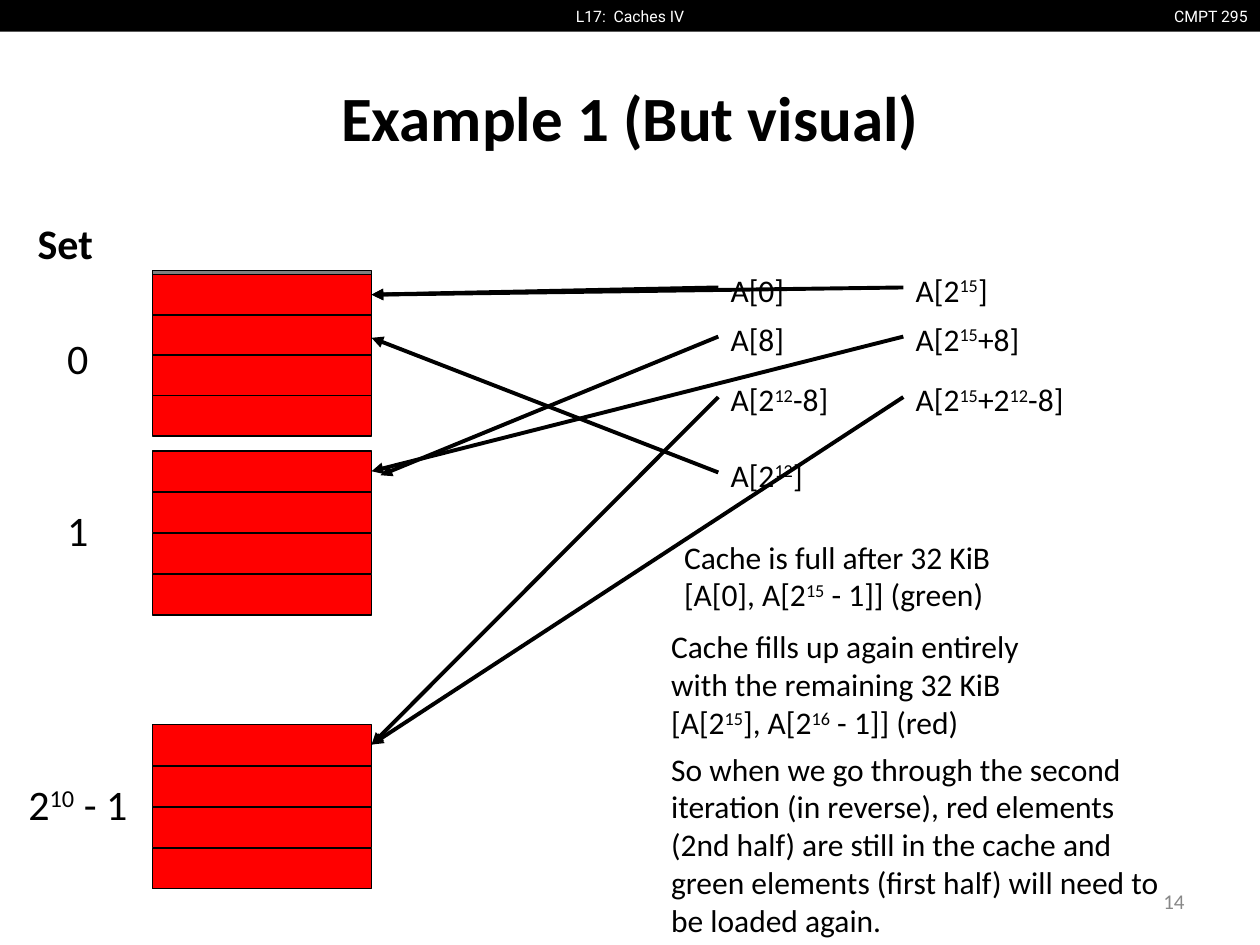
from dataclasses import dataclass

from lxml import etree
from pptx import Presentation
from pptx.dml.color import RGBColor
from pptx.enum import shapes, text
from pptx.oxml.ns import qn
from pptx.util import Cm, Pt


@dataclass(frozen=True)
class Theme:
    black: RGBColor = RGBColor(0, 0, 0)
    white: RGBColor = RGBColor(255, 255, 255)
    red: RGBColor = RGBColor(255, 0, 0)
    gray: RGBColor = RGBColor(128, 128, 128)
    number: RGBColor = RGBColor(0x88, 0x88, 0x88)
    body_font: str = "Calibri"
    header_font: str = "Roboto"
    title_size: int = 36
    set_size: int = 24
    body_size: int = 18
    number_size: int = 12
    header_size: int = 9


THEME = Theme()
LEFT, CENTER, RIGHT = text.PP_ALIGN.LEFT, text.PP_ALIGN.CENTER, text.PP_ALIGN.RIGHT
BLOCK_LEFT, BLOCK_WIDTH, BLOCK_HEIGHT = 3.07, 4.42, 0.82
BLOCK_RIGHT = BLOCK_LEFT + BLOCK_WIDTH
LABEL_HEIGHT = 1.17

# label, top of the label, top of the first block, distance between blocks
SETS = [
    ("0", 6.45, 5.54, 0.81),
    ("1", 9.93, 9.09, 0.83),
    ("2^10^ - 1", 15.44, 14.61, 0.83),
]
# label, left, top, width, arrow target
ELEMENTS = [
    ("A[0]", 14.48, 5.21, 1.63, (BLOCK_RIGHT, 5.94)),
    ("A[8]", 14.48, 6.2, 1.63, (7.67, 9.58)),
    ("A[2^12^-8]", 14.48, 7.42, 2.54, (BLOCK_RIGHT, 15.01)),
    ("A[2^12^]", 14.48, 8.94, 2.36, (BLOCK_RIGHT, 6.81)),
    ("A[2^15^]", 18.21, 5.21, 2.08, (BLOCK_RIGHT, 5.94)),
    ("A[2^15^+8]", 18.21, 6.2, 2.82, (BLOCK_RIGHT, 9.5)),
    ("A[2^15^+2^12^-8]", 18.21, 7.42, 3.63, (BLOCK_RIGHT, 15.01)),
]
# text, left, top, width, height
NOTES = [
    ("Cache is full after 32 KiB\n[A[0], A[2^15^ - 1]] (green)", 13.54, 10.59, 10.59, 1.35),
    ("Cache fills up again entirely with the remaining 32 KiB "
     "[A[2^15^], A[2^16^ - 1]] (red)", 13.28, 12.4, 7.77, 2.72),
    ("So when we go through the second iteration (in reverse), red elements "
     "(2nd half) are still in the cache and green elements (first half) "
     "will need to be loaded again.", 13.28, 14.86, 10.59, 2.92),
]


def style_runs(para, size, color, font, bold=False):
    for span in para.runs:
        span.font.size = Pt(size)
        span.font.name = font
        span.font.bold = bold
        span.font.color.rgb = color


def write_marked(para, words):
    """Write words, raising whatever stands between a pair of ^ marks."""
    for index, part in enumerate(words.split("^")):
        span = para.add_run()
        span.text = part
        if index % 2:
            span._r.get_or_add_rPr().set("baseline", "30000")


def add_text(page, words, left, top, width, height, size=THEME.body_size,
             color=THEME.black, font=THEME.body_font, bold=False,
             align=LEFT, inset=0.25, wrap=True):
    box = page.shapes.add_textbox(Cm(left), Cm(top), Cm(width), Cm(height))
    frame = box.text_frame
    frame.word_wrap = wrap
    frame.margin_left = frame.margin_right = Cm(0.25)
    frame.margin_top = frame.margin_bottom = Cm(inset)
    for index, line in enumerate(words.split("\n")):
        para = frame.add_paragraph() if index else frame.paragraphs[0]
        para.alignment = align
        write_marked(para, line)
        style_runs(para, size, color, font, bold)
    return box


def add_block(page, left, top, width, height, fill, outlined=True):
    block = page.shapes.add_shape(shapes.MSO_SHAPE.RECTANGLE,
                                  Cm(left), Cm(top), Cm(width), Cm(height))
    block.shadow.inherit = False
    block.fill.solid()
    block.fill.fore_color.rgb = fill
    if outlined:
        block.line.color.rgb = THEME.black
        block.line.width = Pt(0.75)
    else:
        block.line.fill.background()


def add_arrow(page, start, end):
    arrow = page.shapes.add_connector(
        shapes.MSO_CONNECTOR.STRAIGHT, *(Cm(value) for value in (*start, *end)))
    arrow.line.color.rgb = THEME.black
    arrow.line.width = Pt(2.25)
    etree.SubElement(arrow.line._get_or_add_ln(), qn("a:tailEnd"), type="triangle")
    etree.SubElement(arrow._element.spPr, qn("a:effectLst"))


def add_header(page):
    add_block(page, 0, 0, 25.4, 0.64, THEME.black, outlined=False)
    for words, left, width, align in (("CMPT 295", 23.34, 2.06, RIGHT),
                                      ("L17:  Caches IV", 11, 3.4, CENTER)):
        add_text(page, words, left, 0, width, 0.64, THEME.header_size, THEME.white,
                 THEME.header_font, align=align, inset=0.13, wrap=False)


def set_title(page, words):
    title = page.shapes.title
    title.left, title.top, title.width, title.height = Cm(1.27), Cm(0.76), Cm(22.86), Cm(3.18)
    frame = title.text_frame
    frame.text = words
    frame.vertical_anchor = text.MSO_ANCHOR.MIDDLE
    frame.margin_top = frame.margin_bottom = Cm(0.25)
    para = frame.paragraphs[0]
    para.alignment = CENTER
    style_runs(para, THEME.title_size, THEME.black, THEME.body_font, bold=True)


def add_cache(page):
    add_text(page, "Set", 0.51, 4.14, 1.9, 0.81, THEME.set_size, bold=True, wrap=False)
    add_block(page, BLOCK_LEFT, 5.46, BLOCK_WIDTH, BLOCK_HEIGHT, THEME.gray)
    for label, label_top, first_top, pitch in SETS:
        add_text(page, label, 0.3, label_top, 2.54, 1.35, THEME.set_size,
                 align=CENTER, wrap=False)
        for row in range(4):
            add_block(page, BLOCK_LEFT, first_top + row * pitch,
                      BLOCK_WIDTH, BLOCK_HEIGHT, THEME.red)


def add_elements(page):
    for label, left, top, width, target in ELEMENTS:
        add_text(page, label, left, top, width, LABEL_HEIGHT, wrap=False)
        add_arrow(page, (left, top + LABEL_HEIGHT / 2), target)


def main():
    deck = Presentation()
    deck.slide_width, deck.slide_height = Cm(25.4), Cm(19.05)
    page = deck.slides.add_slide(deck.slide_layouts[5])
    add_header(page)
    set_title(page, "Example 1 (But visual)")
    number = add_text(page, "14", 18.21, 17.65, 5.92, 1.02, THEME.number_size,
                      THEME.number, align=RIGHT, inset=0.13)
    number.text_frame.vertical_anchor = text.MSO_ANCHOR.MIDDLE
    add_cache(page)
    add_elements(page)
    for note in NOTES:
        add_text(page, *note)
    deck.save("out.pptx")


if __name__ == "__main__":
    main()
